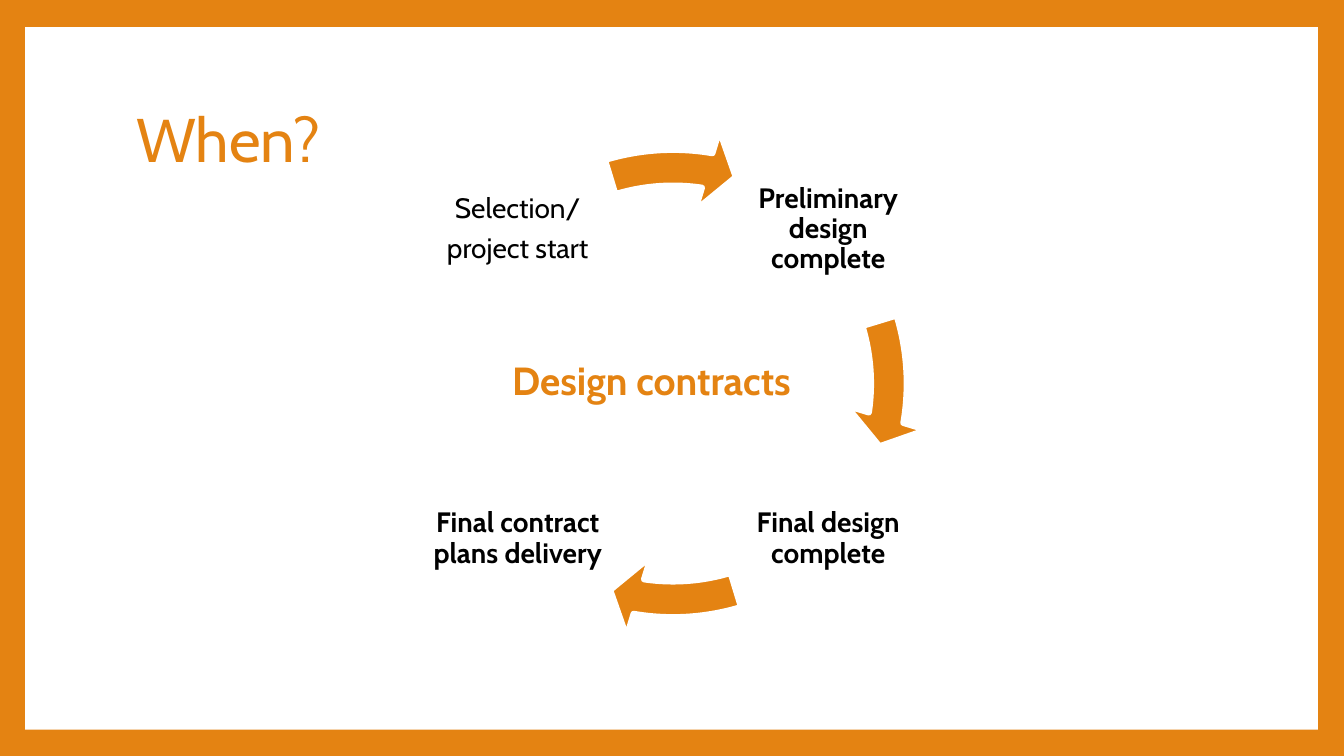
"""Build the "When?" slide with its cycle of design contract milestones."""
from lxml import etree
from pptx import Presentation
from pptx.dml.color import RGBColor
from pptx.enum.shapes import MSO_SHAPE as SHAPE
from pptx.enum.text import MSO_ANCHOR as ANCHOR, MSO_AUTO_SIZE as AUTO, PP_ALIGN as ALIGN
from pptx.oxml.ns import qn
from pptx.util import Inches, Pt

ORANGE, WHITE, BLACK = "E48312", "FFFFFF", "000000"


def paint(target, color):
    if hasattr(target, "solid"):
        target.solid()
        target.fore_color.rgb = RGBColor.from_string(color)
    else:
        target.color.rgb = RGBColor.from_string(color)


def write(sp, lines, size, color, bold, align, anchor):
    tf = sp.text_frame
    tf.word_wrap, tf.auto_size, tf.vertical_anchor = True, AUTO.NONE, anchor
    for i, line in enumerate(lines):
        p = tf.add_paragraph() if i else tf.paragraphs[0]
        p.alignment, p.line_spacing = align, 0.9
        p.space_before = Pt(0)
        r = p.add_run()
        r.text = line
        r.font.name, r.font.size, r.font.bold = "Cabin", Pt(size), bold
        paint(r.font, color)
    return tf


prs = Presentation()
prs.slide_width, prs.slide_height = Inches(13.33), Inches(7.5)
s = prs.slides.add_slide(prs.slide_layouts[1])
paint(s.background.fill, ORANGE)

panel = s.shapes.add_shape(SHAPE.RECTANGLE, Inches(0.25), Inches(0.27), Inches(12.82), Inches(6.97))
panel.shadow.inherit = False
paint(panel.fill, WHITE)
panel.line.fill.background()
s.shapes._spTree.insert(2, panel._element)

title, body = s.shapes.title, s.placeholders[1]
title.left, title.top, title.width, title.height = map(Inches, (1.25, 0.67, 10.8, 1.48))
write(title, ["When?"], 44, ORANGE, False, ALIGN.LEFT, ANCHOR.MIDDLE)

for step in (0, 1, 3):
    sp = s.shapes.add_shape(SHAPE.CIRCULAR_ARROW, Inches(4.12), Inches(1.25), Inches(5.11), Inches(5.11))
    sp.shadow.inherit = False
    turn = 54 * step
    for i, value in enumerate((0.069, 4.657, 5.48 + turn, (205.863 + turn) % 216, 0.081)):
        sp.adjustments[i] = value
    paint(sp.fill, ORANGE)
    paint(sp.line, WHITE)
    sp.line.width = Pt(4.25)

milestones = [
    (4.23, 1.37, ["Selection/", "project start"], False),
    (7.31, 1.37, ["Preliminary design complete"], True),
    (7.31, 4.44, ["Final design complete"], True),
    (4.23, 4.44, ["Final contract plans delivery"], True),
]
for x, y, lines, bold in milestones:
    sp = s.shapes.add_textbox(Inches(x), Inches(y), Inches(1.81), Inches(1.81))
    tf = write(sp, lines, 20, BLACK, bold, ALIGN.CENTER, ANCHOR.MIDDLE)
    tf.margin_left = tf.margin_right = tf.margin_top = tf.margin_bottom = Inches(0.03)
    for p in tf.paragraphs:
        p.space_after = Pt(7)

body.left, body.top, body.width, body.height = map(Inches, (4.93, 3.54, 3.19, 0.58))
p = write(body, ["Design contracts"], 28, ORANGE, True, ALIGN.LEFT, ANCHOR.TOP).paragraphs[0]
p.space_before = Pt(14)
pPr = p._p.get_or_add_pPr()
pPr.set("marL", str(Inches(0.05)))
pPr.set("indent", "0")
etree.SubElement(pPr, qn("a:buNone"))
s.shapes._spTree.append(body._element)

prs.save("out.pptx")
